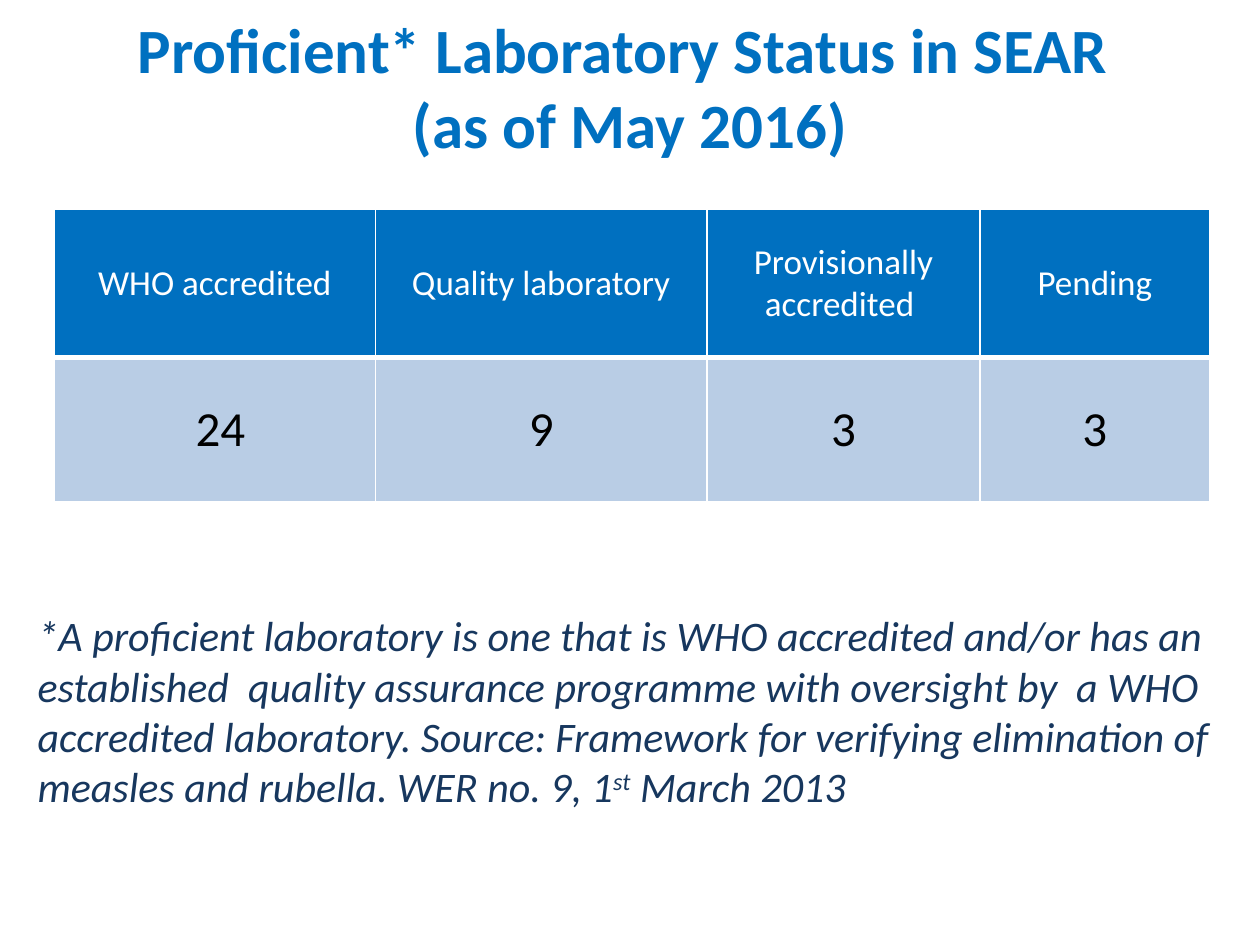
from lxml import etree
from pptx import Presentation
from pptx.dml.color import RGBColor
from pptx.enum.text import MSO_ANCHOR, PP_ALIGN
from pptx.oxml.ns import qn
from pptx.util import Inches, Pt

COLORS = {"blue": "0070C0", "pale": "B9CDE5", "navy": "17375E",
          "white": "FFFFFF", "black": "000000"}


class SlideBuilder:
    font = "Calibri"

    def __init__(self, prs):
        self.s = prs.slides.add_slide(prs.slide_layouts[5])

    def style(self, tf, size, color, align=PP_ALIGN.LEFT, bold=False, italic=False):
        for p in tf.paragraphs:
            p.alignment = align
            for r in p.runs:
                f = r.font
                f.name, f.size, f.bold, f.italic = self.font, Pt(size), bold, italic
                f.color.rgb = RGBColor.from_string(COLORS[color])

    def title(self, text, box):
        sp = self.s.shapes.title
        sp.left, sp.top, sp.width, sp.height = map(Inches, box)
        tf = sp.text_frame
        tf.text = text
        tf.vertical_anchor = MSO_ANCHOR.MIDDLE
        self.style(tf, 36, "blue", PP_ALIGN.CENTER, bold=True)

    def borders(self, cell, bottom):
        tc_pr = cell._tc.get_or_add_tcPr()
        sides = {"lnL": 1, "lnR": 1, "lnT": 1, "lnB": bottom}
        for i, (side, width) in enumerate(sides.items()):
            ln = etree.Element(qn(f"a:{side}"), w=str(Pt(width)))
            fill = etree.SubElement(ln, qn("a:solidFill"))
            etree.SubElement(fill, qn("a:srgbClr"), val=COLORS["white"])
            tc_pr.insert(i, ln)  # lines go before the cell fill

    def table(self, rows, left, top, widths, heights, looks):
        table = self.s.shapes.add_table(
            len(rows), len(widths), Inches(left), Inches(top),
            Inches(sum(widths)), Inches(sum(heights))).table
        for col, width in zip(table.columns, widths):
            col.width = Inches(width)
        for i, (row, height, look) in enumerate(zip(rows, heights, looks)):
            fill, color, size, bottom = look
            table.rows[i].height = Inches(height)
            for j, text in enumerate(row):
                cell = table.cell(i, j)
                cell.text_frame.text = text
                cell.vertical_anchor = MSO_ANCHOR.MIDDLE
                cell.fill.solid()
                cell.fill.fore_color.rgb = RGBColor.from_string(COLORS[fill])
                self.borders(cell, bottom)
                self.style(cell.text_frame, size, color, PP_ALIGN.CENTER)

    def note(self, parts, box):
        tf = self.s.shapes.add_textbox(*map(Inches, box)).text_frame
        tf.word_wrap = True
        p = tf.paragraphs[0]
        for text, baseline in parts:
            r = p.add_run()
            r.text = text
            if baseline:
                r._r.get_or_add_rPr().set("baseline", str(baseline * 1000))
        self.style(tf, 24, "navy", italic=True)


def main():
    prs = Presentation()
    prs.slide_width, prs.slide_height = Inches(10), Inches(7.5)
    slide = SlideBuilder(prs)

    # Title
    slide.title("Proficient* Laboratory Status in SEAR \n(as of May 2016)",
                (0, 0.05, 10, 1.26))

    # Laboratory counts by status
    slide.table(
        [["WHO accredited", "Quality laboratory", "Provisionally\naccredited ", "Pending"],
         [" 24", "9", "3", "3"]],
        0.43, 1.66, widths=[2.55, 2.63, 2.17, 1.82], heights=[1.18, 1.14],
        looks=[("blue", "white", 20, 3), ("pale", "black", 28, 1)])

    # Definition and source
    slide.note(
        [("*A proficient laboratory is one that is WHO accredited and/or has an "
          "established  quality assurance programme with oversight by  a WHO "
          "accredited laboratory. Source: Framework for verifying elimination of "
          "measles and rubella. WER no. 9, 1", 0),
         ("st", 30),
         (" March 2013", 0)],
        (0.2, 4.79, 9.69, 2.19))

    prs.save("out.pptx")


if __name__ == "__main__":
    main()
